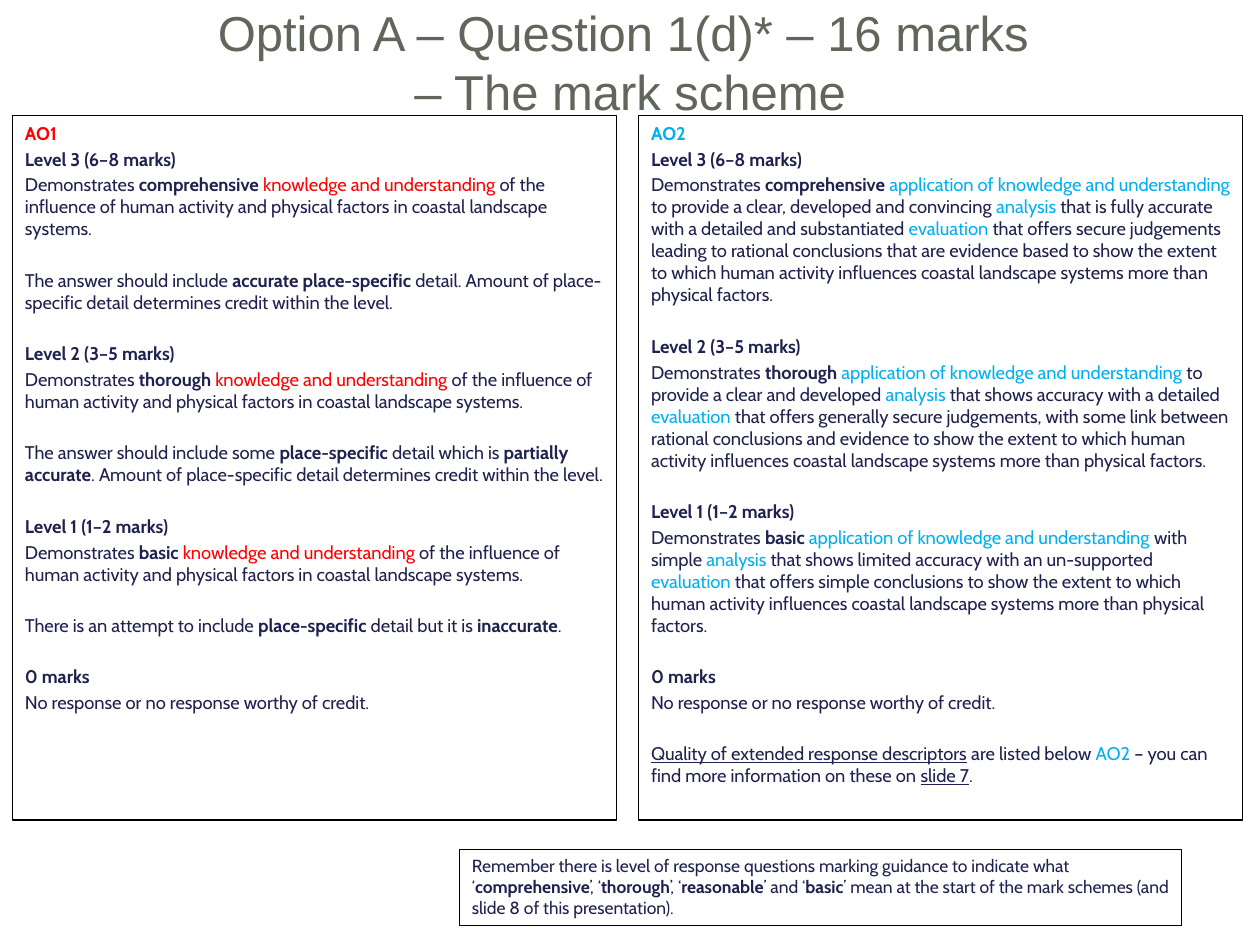
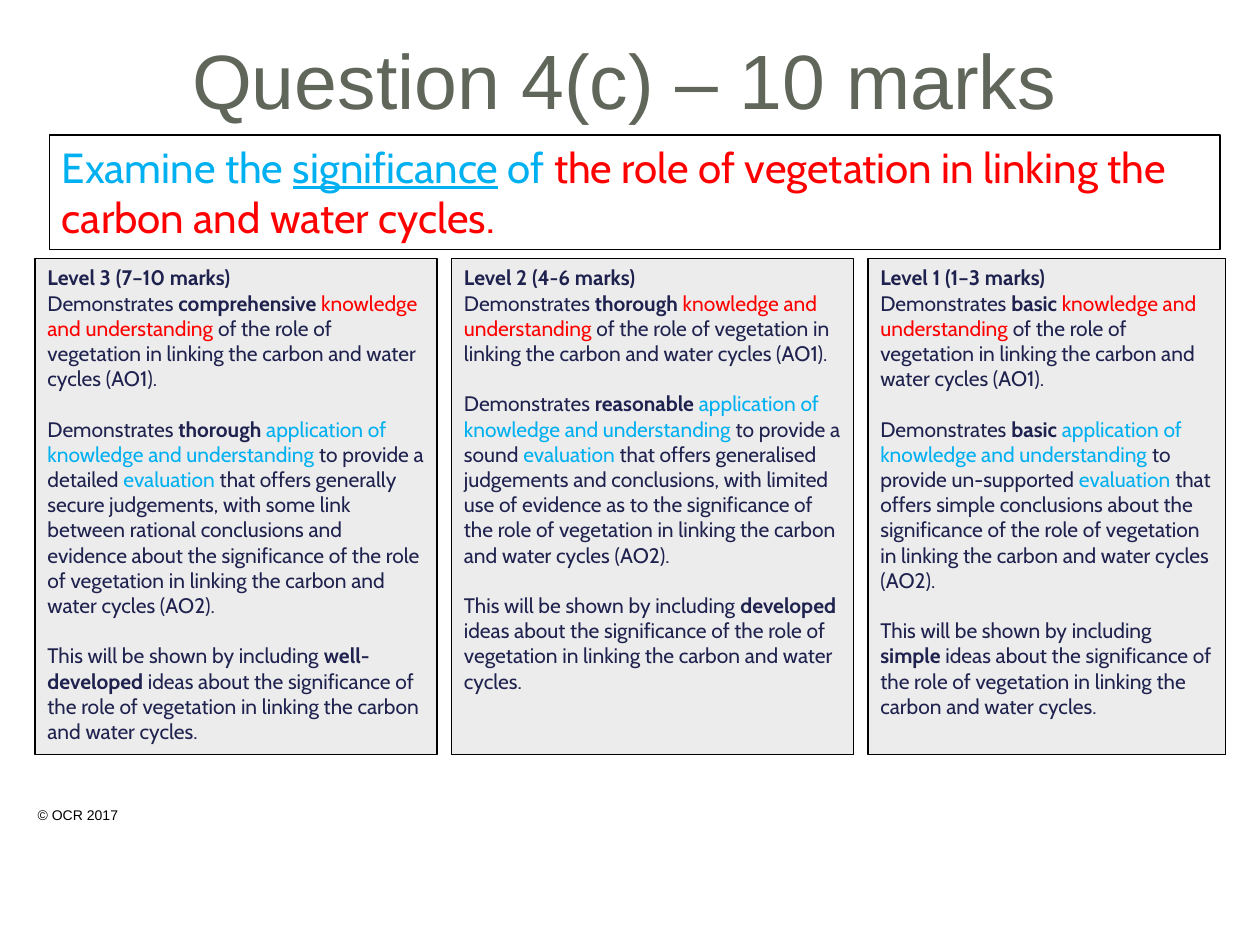
from pptx import Presentation
from pptx.dml.color import RGBColor
from pptx.enum.shapes import MSO_SHAPE
from pptx.enum.text import MSO_ANCHOR, MSO_AUTO_SIZE, PP_ALIGN
from pptx.util import Pt

RECT = MSO_SHAPE.RECTANGLE
TOP, MIDDLE = MSO_ANCHOR.TOP, MSO_ANCHOR.MIDDLE
LEFT, CENTER = PP_ALIGN.LEFT, PP_ALIGN.CENTER
NO_AUTOSIZE = MSO_AUTO_SIZE.NONE
TITLE_ONLY = 5

NAVY, RED, BLUE = "1F224E", "FF0000", "00B0F0"
TITLE_GREY, PANEL_GREY, WHITE, BLACK = "60665A", "ECECEC", "FFFFFF", "000000"
TITLE_FONT, BODY_FONT = "Arial", "Cabin"
# Marks that switch a style on and off inside a paragraph
MARKS = {"*": "bold", "_": "underline", "^": RED, "~": BLUE}

KNOWLEDGE = "^knowledge and understanding^"
APPLICATION = "~application of knowledge and understanding~"
COAST_FACTORS = ("of the influence of human activity and physical factors "
                 "in coastal landscape systems.")
COAST_EXTENT = ("to show the extent to which human activity influences coastal "
                "landscape systems more than physical factors.")
PLACE_CREDIT = "Amount of place-specific detail determines credit within the level."
NO_MARKS = ["*0 marks*", "No response or no response worthy of credit."]
CYCLES_ROLE = "the role of vegetation in linking the carbon and water cycles"

# Each inner list is a group of paragraphs; a wider gap separates groups.
AO1_SCHEME = [
    ["^*AO1*^", "*Level 3 (6–8 marks)*",
     f"Demonstrates *comprehensive* {KNOWLEDGE} {COAST_FACTORS}"],
    [f"The answer should include *accurate place-specific* detail. {PLACE_CREDIT}"],
    ["*Level 2 (3–5 marks)*",
     f"Demonstrates *thorough* {KNOWLEDGE} {COAST_FACTORS}"],
    ["The answer should include some *place-specific* detail which is "
     f"*partially accurate*. {PLACE_CREDIT}"],
    ["*Level 1 (1–2 marks)*",
     f"Demonstrates *basic* {KNOWLEDGE} {COAST_FACTORS}"],
    ["There is an attempt to include *place-specific* detail but it is *inaccurate*."],
    NO_MARKS,
]
AO2_SCHEME = [
    ["~*AO2*~", "*Level 3 (6–8 marks)*",
     f"Demonstrates *comprehensive* {APPLICATION} to provide a clear, developed and "
     "convincing ~analysis~ that is fully accurate with a detailed and substantiated "
     "~evaluation~ that offers secure judgements leading to rational conclusions "
     f"that are evidence based {COAST_EXTENT}"],
    ["*Level 2 (3–5 marks)*",
     f"Demonstrates *thorough* {APPLICATION} to provide a clear and developed "
     "~analysis~ that shows accuracy with a detailed ~evaluation~ that offers "
     "generally secure judgements, with some link between rational conclusions "
     f"and evidence {COAST_EXTENT}"],
    ["*Level 1 (1–2 marks)*",
     f"Demonstrates *basic* {APPLICATION} with simple ~analysis~ that shows limited "
     "accuracy with an un-supported ~evaluation~ that offers simple conclusions "
     f"{COAST_EXTENT}"],
    NO_MARKS,
    ["_Quality of extended response descriptors_ are listed below ~AO2~ – you can "
     "find more information on these on _slide 7_."],
]
GUIDANCE = ("Remember there is level of response questions marking guidance to indicate "
            "what ‘*comprehensive*’, ‘*thorough*’, ‘*reasonable*’ and ‘*basic*’ mean at "
            "the start of the mark schemes (and slide 8 of this presentation).")
EXAM_QUESTION = f"~Examine the _significance_ of ~^{CYCLES_ROLE}.^"


def cycles_level(heading, knowledge, application, judgement, ideas):
    """Paragraph groups of one level of the carbon and water cycles scheme."""
    return [
        [f"*{heading}*",
         f"Demonstrates *{knowledge}* {KNOWLEDGE} of {CYCLES_ROLE} (AO1)."],
        [f"Demonstrates *{application}* {APPLICATION} to provide {judgement} "
         f"the significance of {CYCLES_ROLE} (AO2)."],
        [f"This will be shown by including *{ideas}* ideas about the significance "
         f"of {CYCLES_ROLE}."],
    ]


CYCLES_LEVELS = [
    (229.7, cycles_level(
        "Level 3 (7–10 marks)", "comprehensive", "thorough",
        "a detailed ~evaluation~ that offers generally secure judgements, with some "
        "link between rational conclusions and evidence about", "well-developed")),
    (229.7, cycles_level(
        "Level 2 (4-6 marks)", "thorough", "reasonable",
        "a sound ~evaluation~ that offers generalised judgements and conclusions, "
        "with limited use of evidence as to", "developed")),
    (204.5, cycles_level(
        "Level 1 (1–3 marks)", "basic", "basic",
        "un-supported ~evaluation~ that offers simple conclusions about", "simple")),
]


def color(hex_value):
    return RGBColor.from_string(hex_value)


def apply(target, values):
    for name, value in values.items():
        setattr(target, name, value)


def place(shape, left, top, width, height):
    apply(shape, {"left": Pt(left), "top": Pt(top),
                  "width": Pt(width), "height": Pt(height)})


def split_marks(text):
    """Yield (piece, active styles) for each stretch of evenly styled text."""
    active, piece = set(), ""
    for char in text:
        if char in MARKS:
            if piece:
                yield piece, active
            active, piece = active ^ {MARKS[char]}, ""
        else:
            piece += char
    if piece:
        yield piece, active


def write_runs(paragraph, text, size, font=BODY_FONT, base_color=NAVY):
    for piece, styles in split_marks(text):
        run = paragraph.add_run()
        run.text = piece
        apply(run.font, {"name": font, "size": Pt(size),
                         "bold": "bold" in styles, "underline": "underline" in styles})
        accent = next((c for c in (RED, BLUE) if c in styles), base_color)
        run.font.color.rgb = color(accent)


def write_groups(frame, groups, size, line_gap, group_gap):
    apply(frame, {"word_wrap": True, "vertical_anchor": TOP, "auto_size": NO_AUTOSIZE})
    paragraph = frame.paragraphs[0]
    for group_no, group in enumerate(groups):
        for line_no, text in enumerate(group):
            if group_no or line_no:
                paragraph = frame.add_paragraph()
                paragraph.space_before = Pt(line_gap if line_no else group_gap)
            paragraph.alignment = LEFT
            write_runs(paragraph, text, size)


def add_title(slide, text, size, box):
    title = slide.shapes.title
    place(title, *box)
    frame = title.text_frame
    frame.text = text
    apply(frame, {"word_wrap": True, "vertical_anchor": MIDDLE, "auto_size": NO_AUTOSIZE})
    paragraph = frame.paragraphs[0]
    paragraph.alignment = CENTER
    apply(paragraph.font, {"name": TITLE_FONT, "size": Pt(size)})
    paragraph.font.color.rgb = color(TITLE_GREY)


def add_panel(slide, box, groups, size, fill=None, line_gap=0, group_gap=0):
    panel = slide.shapes.add_shape(RECT, *map(Pt, box))
    panel.shadow.inherit = False
    if fill:
        panel.fill.solid()
        panel.fill.fore_color.rgb = color(fill)
    else:
        panel.fill.background()
    panel.line.color.rgb = color(BLACK)
    panel.line.width = Pt(0.75)
    write_groups(panel.text_frame, groups, size, line_gap, group_gap)


def add_copyright(slide):
    footer = slide.shapes.add_textbox(Pt(14.4), Pt(457.2), Pt(136), Pt(17))
    footer.text_frame.word_wrap = True
    write_runs(footer.text_frame.paragraphs[0], "© OCR 2017", 8, TITLE_FONT, BLACK)


def build_coast_scheme(slide):
    add_title(slide, "Option A – Question 1(d)* – 16 marks \v– The mark scheme",
              28, (0, 13.7, 720, 42.5))
    for left, scheme in ((7.2, AO1_SCHEME), (365, AO2_SCHEME)):
        add_panel(slide, (left, 66.2, 345.2, 402.5), scheme, 10.5, WHITE,
                  line_gap=2.1, group_gap=16.8)
    add_panel(slide, (262.6, 485.3, 412.6, 43.6), [[GUIDANCE]], 10)


def build_cycles_scheme(slide):
    add_copyright(slide)
    add_title(slide, "Question 4(c) – 10 marks", 44, (33, 0, 648, 90))
    add_panel(slide, (28.2, 77.2, 669, 65.4), [[EXAM_QUESTION]], 24)
    for column, (width, level) in enumerate(CYCLES_LEVELS):
        add_panel(slide, (20 + 238 * column, 147.8, width, 283.5), level, 12,
                  PANEL_GREY, group_gap=14.4)


def main():
    deck = Presentation()
    apply(deck, {"slide_width": Pt(720), "slide_height": Pt(540)})
    for build in (build_coast_scheme, build_cycles_scheme):
        build(deck.slides.add_slide(deck.slide_layouts[TITLE_ONLY]))
    deck.save("out.pptx")


if __name__ == "__main__":
    main()
